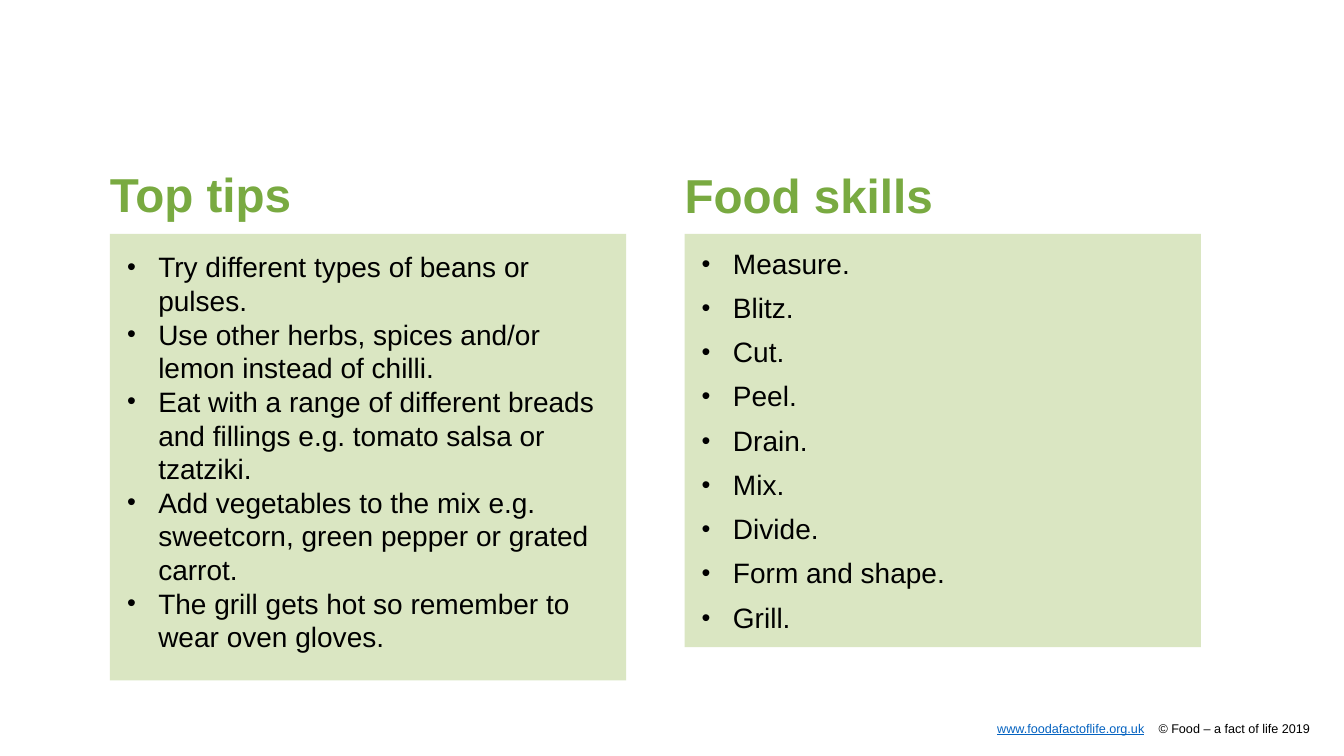
"""Build the slide with top tips and food skills for a cookery lesson."""
from dataclasses import dataclass

from lxml.etree import SubElement
from pptx import Presentation
from pptx.dml.color import RGBColor
from pptx.enum.shapes import MSO_SHAPE as Preset
from pptx.enum.text import MSO_ANCHOR as Anchor, MSO_AUTO_SIZE as AutoSize
from pptx.enum.text import PP_ALIGN as Align
from pptx.oxml.ns import qn
from pptx.util import Inches, Length, Pt

GREEN, PALE_GREEN, BLACK, LINK_BLUE = "79AA41", "DAE6C2", "000000", "0563C1"
PANEL_TOP, PANEL_WIDTH, MARGIN = 2.32, 5.12, 0.17
HANGING = Inches(0.31)


@dataclass
class Column:
    heading: str
    left: float
    heading_top: float
    panel_height: float
    line_spacing: float | Length
    gap: float
    points: list[str]


COLUMNS = [
    Column("Top tips", 1.09, 1.7, 4.43, Pt(24), 0, [
        "Try different types of beans or pulses.",
        "Use other herbs, spices and/or lemon instead of chilli.",
        "Eat with a range of different breads and fillings e.g. tomato salsa or tzatziki.",
        "Add vegetables to the mix e.g. sweetcorn, green pepper or grated carrot.",
        "The grill gets hot so remember to wear oven gloves.",
    ]),
    Column("Food skills", 6.79, 1.71, 4.1, 0.9, 10, [
        "Measure.", "Blitz.", "Cut.", "Peel.", "Drain.", "Mix.", "Divide.",
        "Form and shape.", "Grill.",
    ]),
]


def rgb(value: str) -> RGBColor:
    return RGBColor.from_string(value)


def prepare(frame) -> None:
    frame.word_wrap = True
    frame.auto_size = AutoSize.NONE
    frame.vertical_anchor = Anchor.TOP
    frame.margin_left = frame.margin_right = frame.margin_top = frame.margin_bottom = 0


def add_frame(slide, left: float, top: float, width: float, height: float):
    frame = slide.shapes.add_textbox(
        Inches(left), Inches(top), Inches(width), Inches(height)).text_frame
    prepare(frame)
    return frame


def add_run(paragraph, text: str, size: float, color: str, bold: bool = False,
            underline: bool = False) -> None:
    run = paragraph.add_run()
    run.text = text
    font = run.font
    font.name, font.size, font.bold, font.underline = "Arial", Pt(size), bold, underline
    font.color.rgb = rgb(color)


def add_bullet(paragraph) -> None:
    properties = paragraph._p.get_or_add_pPr()
    properties.set("marL", str(HANGING))
    properties.set("indent", str(-HANGING))
    SubElement(properties, qn("a:buSzPct"), val="90000")
    SubElement(properties, qn("a:buFont"), typeface="Arial")
    SubElement(properties, qn("a:buChar"), char="•")


def write_heading(frame, text: str) -> None:
    paragraph = frame.paragraphs[0]
    paragraph.alignment = Align.LEFT
    paragraph.line_spacing = 0.9
    add_run(paragraph, text, 34, GREEN, bold=True)


def add_panel(slide, column: Column) -> None:
    panel = slide.shapes.add_shape(
        Preset.RECTANGLE, Inches(column.left), Inches(PANEL_TOP),
        Inches(PANEL_WIDTH), Inches(column.panel_height))
    panel.shadow.inherit = False
    panel.fill.solid()
    panel.fill.fore_color.rgb = rgb(PALE_GREEN)
    panel.line.fill.background()


def add_points(slide, column: Column) -> None:
    frame = add_frame(slide, column.left + MARGIN, 2.48, PANEL_WIDTH - 2 * MARGIN, 3.94)
    for index, point in enumerate(column.points):
        paragraph = frame.add_paragraph() if index else frame.paragraphs[0]
        add_bullet(paragraph)
        paragraph.line_spacing = column.line_spacing
        paragraph.space_before = Pt(column.gap if index else 0)
        add_run(paragraph, point, 20, BLACK)


def add_footer(slide) -> None:
    paragraph = add_frame(slide, 9.89, 7.15, 3.15, 0.15).paragraphs[0]
    tabs = SubElement(paragraph._p.get_or_add_pPr(), qn("a:tabLst"))
    SubElement(tabs, qn("a:tab"), pos=str(Inches(1.6)), algn="l")
    add_run(paragraph, "www.foodafactoflife.org.uk", 9, LINK_BLUE, underline=True)
    add_run(paragraph, "\t© Food – a fact of life 2019", 9, BLACK)


def main() -> None:
    deck = Presentation()
    deck.slide_width, deck.slide_height = Inches(13.33), Inches(7.5)
    slide = deck.slides.add_slide(deck.slide_layouts[5])
    add_footer(slide)
    tips, skills = COLUMNS
    for column in COLUMNS:
        add_panel(slide, column)
        add_points(slide, column)
    title = slide.shapes.title
    title.left, title.top = Inches(tips.left), Inches(tips.heading_top)
    title.width, title.height = Inches(10.63), Inches(0.79)
    prepare(title.text_frame)
    write_heading(title.text_frame, tips.heading)
    write_heading(add_frame(slide, skills.left, skills.heading_top, PANEL_WIDTH, 0.79),
                  skills.heading)
    deck.save("out.pptx")


if __name__ == "__main__":
    main()
